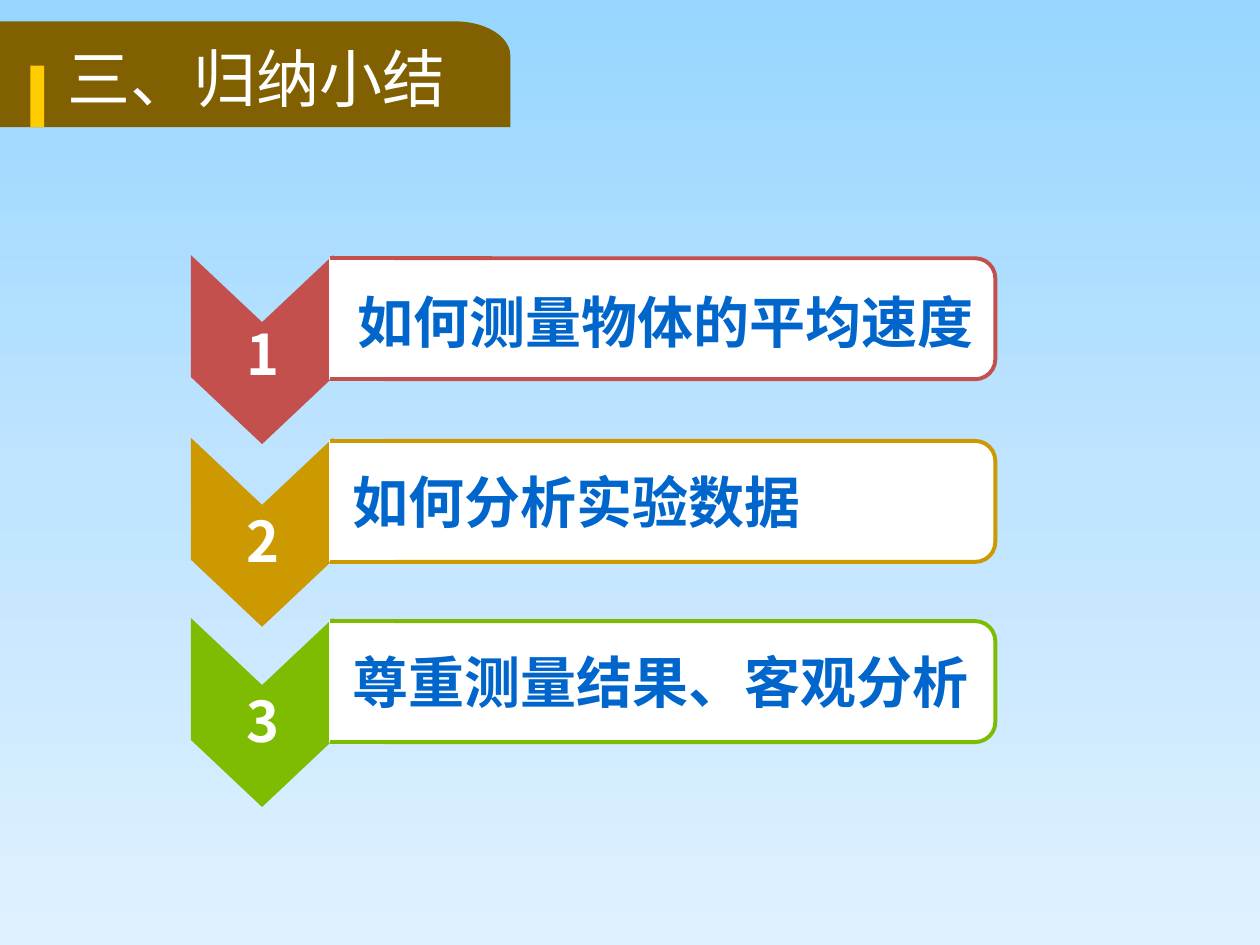
from copy import deepcopy
from math import cos, pi, sin

from pptx import Presentation
from pptx.dml.color import RGBColor
from pptx.enum.shapes import MSO_CONNECTOR, MSO_SHAPE
from pptx.enum.text import MSO_ANCHOR
from pptx.oxml.ns import qn
from pptx.oxml.xmlchemy import OxmlElement
from pptx.util import Inches, Pt

FONT = "Noto Sans CJK SC"
WHITE = RGBColor(0xFF, 0xFF, 0xFF)
BLUE = RGBColor(0x00, 0x66, 0xCC)
BROWN = RGBColor(0x80, 0x60, 0x00)
YELLOW = RGBColor(0xFF, 0xCC, 0x00)
RED = RGBColor(0xC3, 0x50, 0x4D)
GOLD = RGBColor(0xCC, 0x99, 0x00)
GREEN = RGBColor(0x7D, 0xBC, 0x00)
SKY = (
    RGBColor(0x97, 0xD6, 0xFF),
    RGBColor(0xBF, 0xE4, 0xFF),
    RGBColor(0xDF, 0xF1, 0xFF),
)
BAR_HEIGHT = 0.96
ITEMS = (
    ("1", "如何测量物体的平均速度", RED, 2.05, (2.74, 2.23, 5.52), 2.49),
    ("2", "如何分析实验数据", GOLD, 3.5, (2.7, 3.66, 5), 3.97),
    ("3", "尊重测量结果、客观分析", GREEN, 4.93, (2.7, 5.09, 5.22), 5.4),
)


def paint_background(slide):
    fill = slide.background.fill
    fill.gradient()
    fill.gradient_angle = 270
    stop_list = slide.element.find(".//" + qn("a:gsLst"))
    stop_list.insert(1, deepcopy(stop_list[0]))
    for index, (stop, color) in enumerate(zip(fill.gradient_stops, SKY)):
        stop.color.rgb = color
        stop.position = index / 2


def style_shape(shape, fill, line=None, width=0.75):
    shape.shadow.inherit = False
    shape.fill.solid()
    shape.fill.fore_color.rgb = fill
    if line is None:
        shape.line.fill.background()
    else:
        shape.line.color.rgb = line
        shape.line.width = Pt(width)


def add_block(slide, kind, box, fill, line=None, width=0.75, adjustment=None):
    shape = slide.shapes.add_shape(kind, *map(Inches, box))
    style_shape(shape, fill, line, width)
    if adjustment is not None:
        shape.adjustments[0] = adjustment
    return shape


def add_edge(slide, y, color):
    connector = slide.shapes.add_connector(
        MSO_CONNECTOR.STRAIGHT, Inches(2.62), Inches(y), Inches(3.48), Inches(y)
    )
    connector.line.color.rgb = color
    connector.line.width = Pt(2.25)
    connector._element.spPr.append(OxmlElement("a:effectLst"))


def add_text(slide, text, box, font_format, color, frame_format, spacing=None):
    text_box = slide.shapes.add_textbox(*map(Inches, box))
    frame = text_box.text_frame
    for name, value in {"word_wrap": True, **frame_format}.items():
        setattr(frame, name, value)
    paragraph = frame.paragraphs[0]
    paragraph.line_spacing = spacing
    run = paragraph.add_run()
    run.text = text
    for name, value in {"name": FONT, **font_format}.items():
        setattr(run.font, name, value)
    run.font.color.rgb = color
    east_asian = OxmlElement("a:ea")
    east_asian.set("typeface", FONT)
    run.font._element.append(east_asian)


def add_header(slide):
    left, top, right, bottom = -0.03, 0.17, 4.05, 1.01
    radius_x, radius_y, steps = 0.44, 0.27, 24
    angles = [pi / 2 * step / steps for step in range(steps + 1)]
    corner = [
        (
            Inches(right - radius_x + radius_x * sin(angle)),
            Inches(top + radius_y - radius_y * cos(angle)),
        )
        for angle in angles
    ]
    builder = slide.shapes.build_freeform(Inches(left), Inches(top))
    builder.add_line_segments(
        corner + [(Inches(right), Inches(bottom)), (Inches(left), Inches(bottom))]
    )
    style_shape(builder.convert_to_shape(), BROWN)
    add_block(slide, MSO_SHAPE.RECTANGLE, (0.24, 0.52, 0.11, 0.49), YELLOW)
    add_text(
        slide, "三、归纳小结", (0.44, 0.38, 3.73, 0.72), {"size": Pt(36)}, WHITE,
        {"vertical_anchor": MSO_ANCHOR.TOP, "margin_top": 0}, 0.9,
    )


def add_bar(slide, color, top):
    chevron = add_block(
        slide, MSO_SHAPE.CHEVRON, (1.33, top + 0.16, 1.5, 1.13), color, adjustment=0.471
    )
    chevron.rotation = 90
    add_block(
        slide, MSO_SHAPE.ROUNDED_RECTANGLE, (2.9, top, 5, BAR_HEIGHT),
        WHITE, color, 2.25, 0.166,
    )
    add_block(slide, MSO_SHAPE.RECTANGLE, (2.62, top, 0.5, BAR_HEIGHT), WHITE, WHITE)
    for y in (top, top + BAR_HEIGHT):
        add_edge(slide, y, color)


def add_labels(slide, number, text, text_place, number_top):
    font_format = {"size": Pt(32), "bold": True}
    frame_format = {"vertical_anchor": MSO_ANCHOR.MIDDLE}
    add_text(slide, text, (*text_place, 0.63), font_format, BLUE, frame_format)
    add_text(
        slide, number, (1.86, number_top, 0.54, 0.63), font_format, WHITE, frame_format
    )


def main():
    presentation = Presentation()
    presentation.slide_width = Inches(10)
    presentation.slide_height = Inches(7.5)
    slide = presentation.slides.add_slide(presentation.slide_layouts[6])
    paint_background(slide)
    add_header(slide)
    for number, text, color, top, text_place, number_top in ITEMS:
        add_bar(slide, color, top)
        add_labels(slide, number, text, text_place, number_top)
    presentation.save("out.pptx")


if __name__ == "__main__":
    main()
